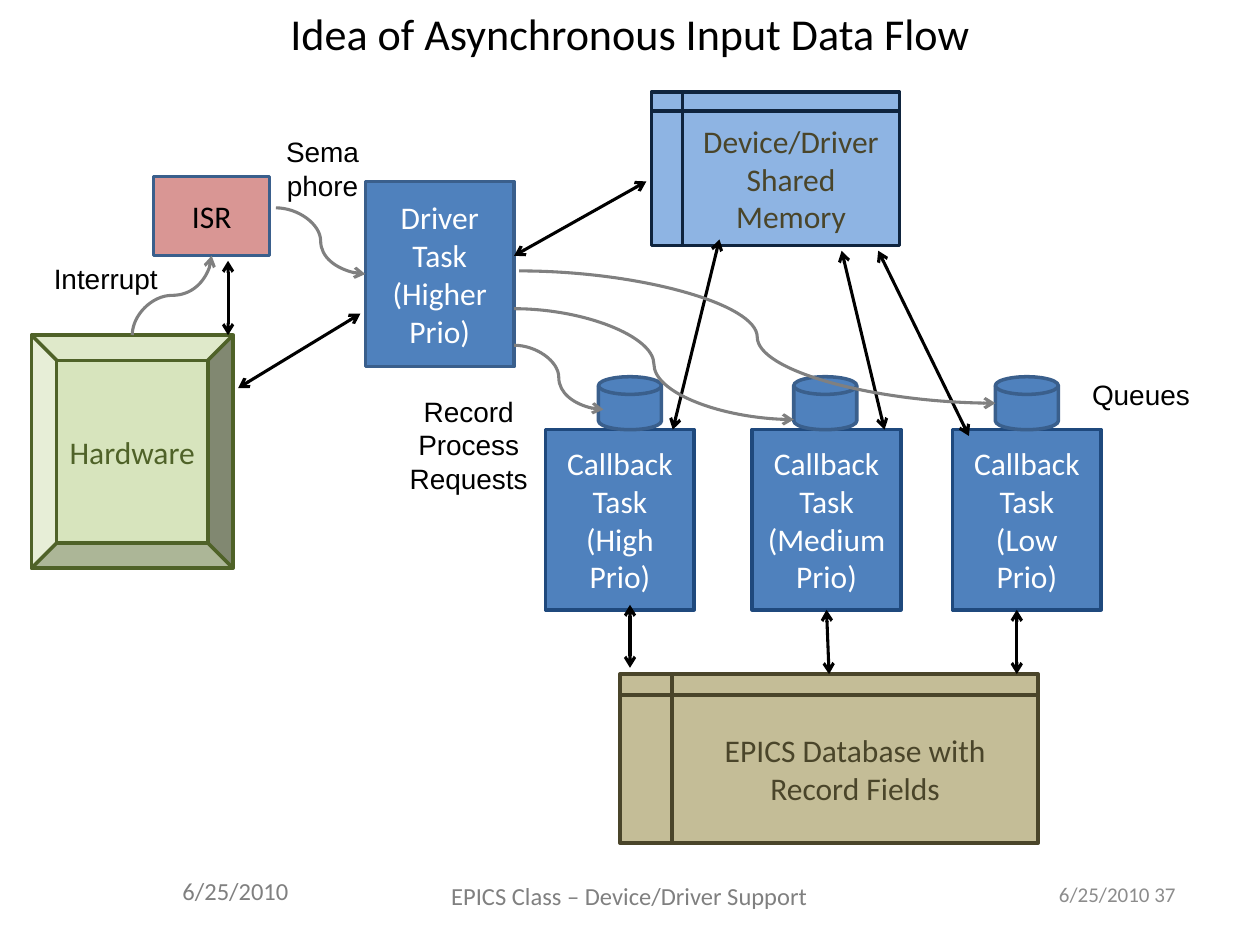
import dataclasses

import lxml.etree
import pptx
import pptx.dml.color
import pptx.enum.shapes
import pptx.enum.text
import pptx.oxml.ns
import pptx.util

Inches = pptx.util.Inches
Pt = pptx.util.Pt
KIND = pptx.enum.shapes.MSO_SHAPE
LINK = pptx.enum.shapes.MSO_CONNECTOR
ALIGN = pptx.enum.text.PP_ALIGN
ANCHOR = pptx.enum.text.MSO_ANCHOR


@dataclasses.dataclass(frozen=True)
class Theme:
    body: str = "Calibri"
    label: str = "Arial"
    black: str = "000000"
    white: str = "FFFFFF"
    gray: str = "808080"
    pale: str = "8C8C8C"
    blue: str = "4F81BD"
    edge: str = "3A5F8C"
    navy: str = "1F497D"
    sky: str = "8EB4E3"
    night: str = "0F243E"
    tan: str = "C4BD97"
    brown: str = "4A452A"
    green: str = "D7E4BD"
    moss: str = "4F6228"
    rose: str = "D99694"
    title: float = 25.2
    box: float = 18
    note: float = 16
    foot: float = 14
    page: float = 12
    rim: float = 2
    wire: float = 1.75


THEME = Theme()


def color(code):
    return pptx.dml.color.RGBColor.from_string(code)


def write(shape, text, size, ink, font=THEME.body, align=ALIGN.CENTER, anchor=ANCHOR.MIDDLE):
    frame = shape.text_frame
    frame.text = text
    frame.word_wrap = True
    frame.vertical_anchor = anchor
    for para in frame.paragraphs:
        para.alignment = align
        for run in para.runs:
            run.font.name = font
            run.font.size = Pt(size)
            run.font.color.rgb = color(ink)


def add_text(slide, place, text, size, ink, **style):
    box = slide.shapes.add_textbox(*map(Inches, place))
    write(box, text, size, ink, **style)


def add_label(slide, place, text):
    add_text(slide, place, text, THEME.note, THEME.black, font=THEME.label, anchor=ANCHOR.TOP)


def add_box(slide, kind, place, fill, rim, text="", ink=THEME.white):
    shape = slide.shapes.add_shape(kind, *map(Inches, place))
    shape.shadow.inherit = False
    shape.fill.solid()
    shape.fill.fore_color.rgb = color(fill)
    shape.line.color.rgb = color(rim)
    shape.line.width = Pt(THEME.rim)
    if text:
        write(shape, text, THEME.box, ink)
    return shape


def add_link(slide, kind, start, end, ink, tips):
    link = slide.shapes.add_connector(kind, *map(Inches, start + end))
    link.line.color.rgb = color(ink)
    link.line.width = Pt(THEME.wire)
    props = link._element.spPr
    for tip in tips:
        lxml.etree.SubElement(link.line._get_or_add_ln(), pptx.oxml.ns.qn("a:" + tip), type="arrow")
    lxml.etree.SubElement(props, pptx.oxml.ns.qn("a:effectLst"))
    return link


def add_arrow(slide, start, end):
    return add_link(slide, LINK.STRAIGHT, start, end, THEME.black, ("headEnd", "tailEnd"))


def add_curve(slide, start, end):
    return add_link(slide, LINK.CURVE, start, end, THEME.gray, ("tailEnd",))


def main():
    deck = pptx.Presentation()
    deck.slide_width = Inches(10)
    deck.slide_height = Inches(7.5)
    slide = deck.slides.add_slide(deck.slide_layouts[6])

    add_text(slide, (0, 0, 10, 0.52), "Idea of Asynchronous Input Data Flow", THEME.title, THEME.black)
    add_text(slide, (2.98, 6.9, 4.03, 0.42), "EPICS Class – Device/Driver Support", THEME.foot, THEME.gray)
    add_text(slide, (7.1, 6.9, 2.33, 0.4), "6/25/2010 37", THEME.page, THEME.pale, align=ALIGN.RIGHT)
    add_text(slide, (1.35, 6.9, 1.6, 0.4), "6/25/2010", THEME.foot, THEME.gray,
             align=ALIGN.LEFT, anchor=ANCHOR.TOP)

    driver = add_box(slide, KIND.FLOWCHART_PROCESS, (2.9, 1.44, 1.18, 1.47), THEME.blue, THEME.edge,
                     "Driver Task\n(Higher\nPrio)")
    tasks = [
        add_box(slide, KIND.FLOWCHART_PROCESS, (left, 3.41, 1.18, 1.43), THEME.blue, THEME.navy,
                "Callback Task\n" + level)
        for left, level in ((4.33, "(High\nPrio)"), (5.97, "(Medium Prio)"), (7.56, "(Low Prio)"))
    ]
    store = add_box(slide, KIND.FLOWCHART_INTERNAL_STORAGE, (4.92, 5.35, 3.32, 1.34), THEME.tan,
                    THEME.brown, "EPICS Database with Record Fields", THEME.brown)
    add_box(slide, KIND.BEVEL, (0.25, 2.66, 1.6, 1.85), THEME.green, THEME.moss, "Hardware", THEME.moss)
    add_box(slide, KIND.FLOWCHART_PROCESS, (1.22, 1.4, 0.92, 0.63), THEME.rose, THEME.edge,
            "ISR", THEME.black)
    add_box(slide, KIND.FLOWCHART_INTERNAL_STORAGE, (5.17, 0.73, 1.97, 1.22), THEME.sky,
            THEME.night, "Device/Driver Shared Memory", THEME.brown)
    for left in (4.75, 6.3, 7.9):
        add_box(slide, KIND.FLOWCHART_MAGNETIC_DISK, (left, 2.99, 0.5, 0.42), THEME.blue, THEME.edge)

    for start, end in (
        ((2.86, 2.49), (1.89, 3.08)),
        ((1.81, 2.07), (1.81, 2.66)),
        ((5.13, 1.44), (4.08, 2.03)),
        ((5.71, 1.9), (5.34, 3.41)),
        ((6.68, 1.99), (7.02, 3.41)),
        ((6.97, 1.99), (7.69, 3.46)),
        ((5, 4.8), (5, 5.3)),
        ((8.07, 4.84), (8.07, 5.35)),
    ):
        add_arrow(slide, start, end)
    middle = add_arrow(slide, (6.56, 4.84), (6.58, 5.35))
    middle.begin_connect(tasks[1], 2)
    middle.end_connect(store, 0)

    for start, end in (
        ((4.08, 2.74), (4.79, 3.25)),
        ((4.08, 2.45), (6.3, 3.33)),
        ((4.12, 2.15), (7.9, 3.2)),
    ):
        add_curve(slide, start, end)
    signal = add_curve(slide, (2.19, 1.65), (2.9, 2.15))
    signal.end_connect(driver, 1)
    rise = add_curve(slide, (1.68, 2.66), (1.05, 2.03))
    rise._element.spPr.xfrm.set("rot", str(90 * 60000))

    for place, text in (
        ((2.14, 1.02, 0.84, 0.64), "Semaphore"),
        ((0.21, 2.03, 1.26, 0.37), "Interrupt"),
        ((8.53, 2.95, 1.05, 0.37), "Queues"),
        ((3.07, 3.08, 1.3, 0.91), "Record Process Requests"),
    ):
        add_label(slide, place, text)

    deck.save("out.pptx")


if __name__ == "__main__":
    main()
